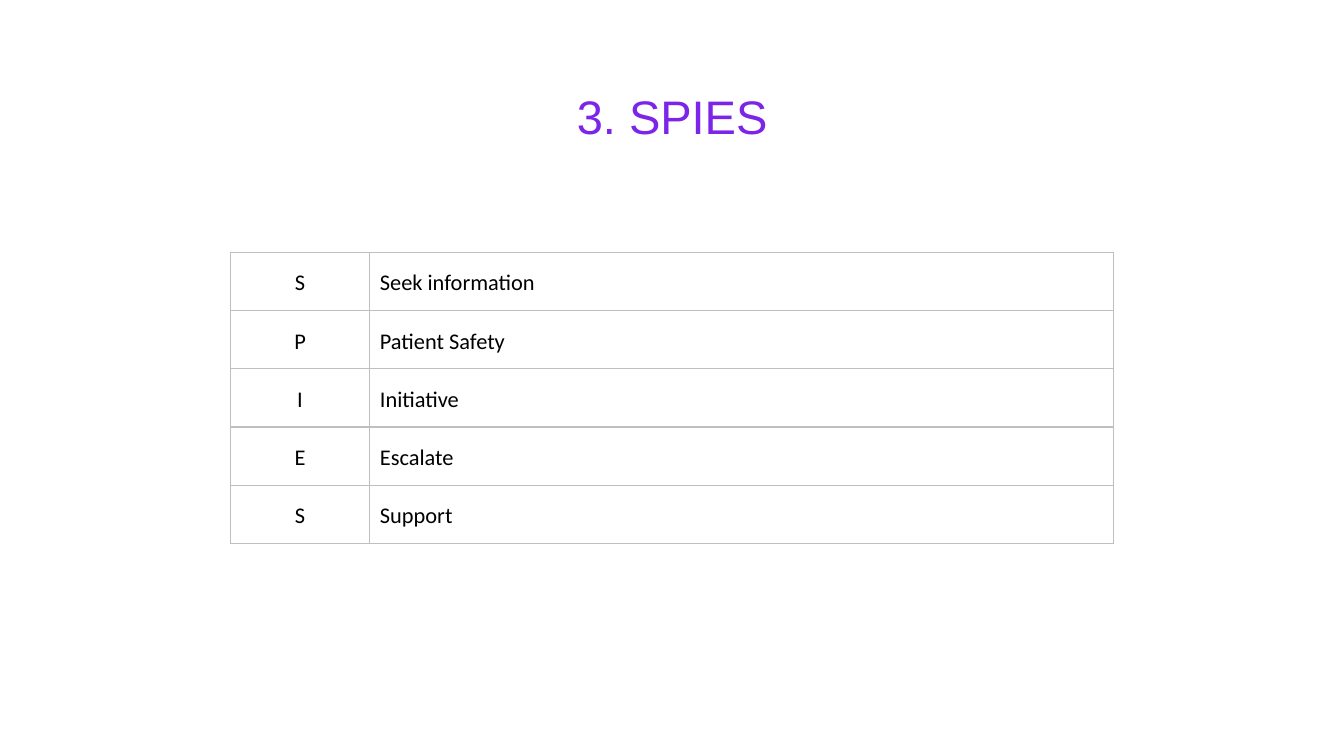
from dataclasses import dataclass

from lxml import etree
from pptx import Presentation
from pptx import util as u
from pptx.dml.color import RGBColor
from pptx.enum import text
from pptx.oxml import ns


@dataclass(frozen=True)
class Theme:
    title_font: str = "Arial"
    body_font: str = "Calibri"
    title_size: float = 25.2
    body_size: float = 12
    title: str = "7C24E8"
    body: str = "000000"
    border: str = "BFBFBF"
    border_width: float = 0.75


@dataclass(frozen=True)
class Step:
    letter: str
    meaning: str


THEME = Theme()
STEPS = [
    Step("S", "Seek information"),
    Step("P", "Patient Safety"),
    Step("I", "Initiative"),
    Step("E", "Escalate"),
    Step("S", "Support"),
]
COLUMN_WIDTHS = (2.64, 14.05)
ROW_HEIGHT = 1.1


def style_paragraph(p, font: str, size: float, color: str, align) -> None:
    p.alignment = align
    p.font.name = font
    p.font.size = u.Pt(size)
    p.font.color.rgb = RGBColor.from_string(color)


def add_title(s, title: str) -> None:
    sp = s.shapes.add_textbox(u.Cm(0.87), u.Cm(1.37), u.Cm(23.67), u.Cm(1.6))
    tf = sp.text_frame
    tf.word_wrap = True
    tf.vertical_anchor = text.MSO_ANCHOR.BOTTOM
    tf.margin_left = tf.margin_right = u.Cm(0.25)
    tf.margin_top = tf.margin_bottom = u.Cm(0.25)
    tf.text = title
    style_paragraph(tf.paragraphs[0], THEME.title_font, THEME.title_size,
                    THEME.title, text.PP_ALIGN.CENTER)


def add_borders(cell) -> None:
    props = cell._tc.get_or_add_tcPr()
    for i, side in enumerate(("lnL", "lnR", "lnT", "lnB")):
        ln = etree.Element(ns.qn(f"a:{side}"), w=str(u.Pt(THEME.border_width)))
        fill = etree.SubElement(ln, ns.qn("a:solidFill"))
        etree.SubElement(fill, ns.qn("a:srgbClr"), val=THEME.border)
        props.insert(i, ln)


def fill_cell(cell, words: str, align) -> None:
    cell.text = words
    cell.fill.background()
    cell.margin_left = cell.margin_right = u.Cm(0.19)
    cell.margin_top = cell.margin_bottom = u.Cm(0.25)
    p = cell.text_frame.paragraphs[0]
    p.line_spacing = 1.15
    style_paragraph(p, THEME.body_font, THEME.body_size, THEME.body, align)
    add_borders(cell)


def add_steps(s, steps: list[Step]) -> None:
    table = s.shapes.add_table(
        len(steps), len(COLUMN_WIDTHS), u.Cm(4.35), u.Cm(4.77),
        u.Cm(sum(COLUMN_WIDTHS)), u.Cm(ROW_HEIGHT * len(steps))).table
    table.first_row = table.horz_banding = False
    for column, width in zip(table.columns, COLUMN_WIDTHS):
        column.width = u.Cm(width)
    for row, step in zip(table.rows, steps):
        row.height = u.Cm(ROW_HEIGHT)
        fill_cell(row.cells[0], step.letter, text.PP_ALIGN.CENTER)
        fill_cell(row.cells[1], step.meaning, text.PP_ALIGN.JUSTIFY)


def main() -> None:
    prs = Presentation()
    prs.slide_width, prs.slide_height = u.Cm(25.4), u.Cm(14.29)
    s = prs.slides.add_slide(prs.slide_layouts[6])
    add_title(s, "3. SPIES")
    add_steps(s, STEPS)
    prs.save("out.pptx")


if __name__ == "__main__":
    main()
